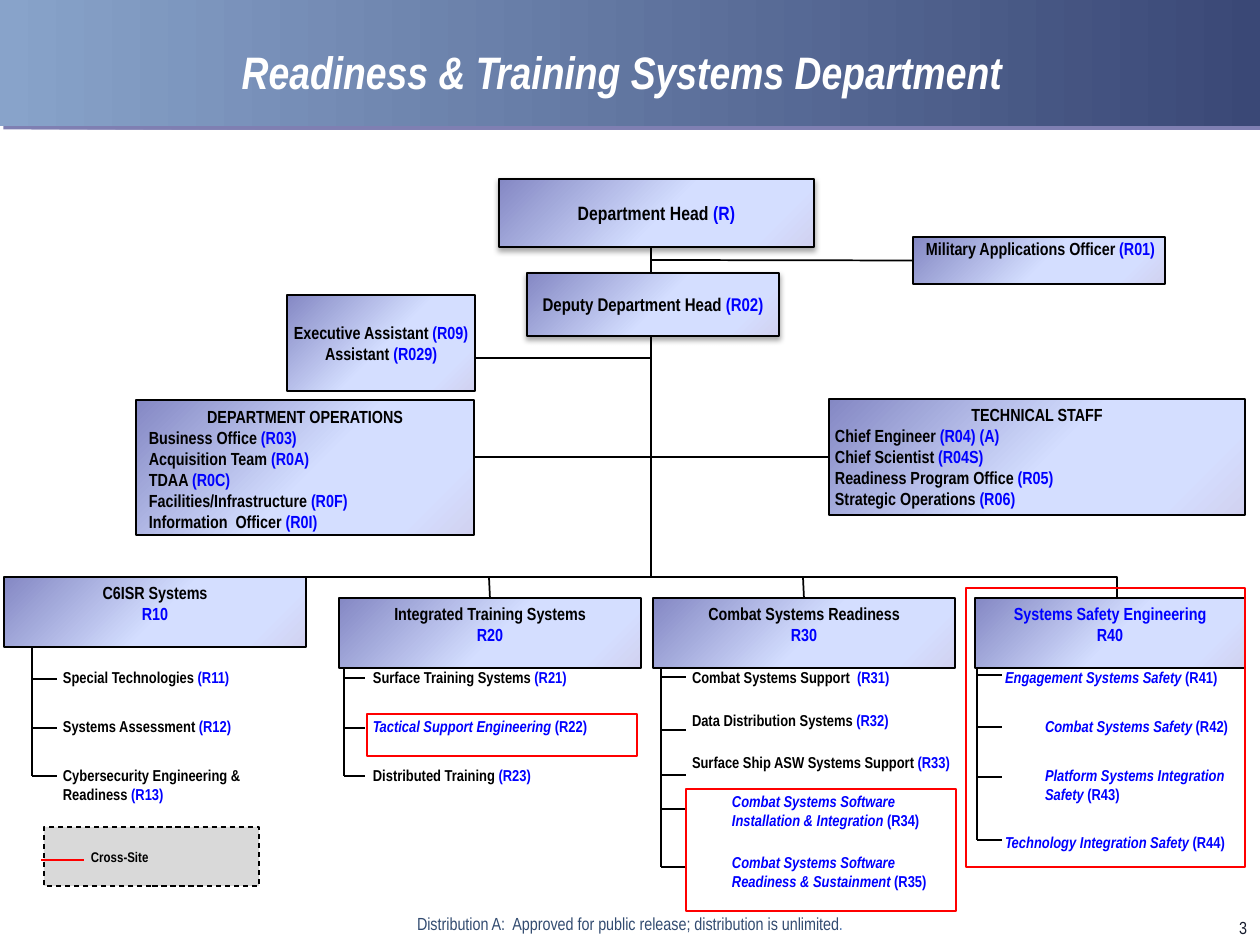
from lxml import etree
from pptx import Presentation
from pptx.dml.color import RGBColor
from pptx.enum.dml import MSO_LINE
from pptx.enum.shapes import MSO_CONNECTOR, MSO_SHAPE
from pptx.enum.text import MSO_ANCHOR, PP_ALIGN
from pptx.oxml.ns import qn
from pptx.util import Emu, Pt

PX = 914400 / 126
FONT = "Arial Narrow"
RECT, LINE, DASH = MSO_SHAPE.RECTANGLE, MSO_CONNECTOR.STRAIGHT, MSO_LINE.DASH
TOP, MIDDLE = MSO_ANCHOR.TOP, MSO_ANCHOR.MIDDLE
LEFT, CENTER, RIGHT = PP_ALIGN.LEFT, PP_ALIGN.CENTER, PP_ALIGN.RIGHT

BLACK = RGBColor(0, 0, 0)
WHITE = RGBColor(255, 255, 255)
BLUE = RGBColor(0, 0, 255)
RED = RGBColor(255, 0, 0)
GRAY = RGBColor(0xD9, 0xD9, 0xD9)
NAVY = RGBColor(0, 0, 0x66)
INK = RGBColor(0x17, 0x1D, 0x2F)
SLATE = RGBColor(0x32, 0x4B, 0x70)
STEEL = RGBColor(0x4E, 0x76, 0xB0)
BAND = [(0, RGBColor(0x88, 0xA3, 0xCA)), (100, RGBColor(0x3A, 0x48, 0x76))]
SHEEN = [(0, RGBColor(0x84, 0x88, 0xC4)), (53, RGBColor(0xD4, 0xDE, 0xFF)),
         (83, RGBColor(0xD4, 0xDE, 0xFF)), (100, RGBColor(0xD1, 0xD1, 0xF0))]

# Staff boxes: place, size, inset x and y, anchor, shadow, lines of (name, code)
STAFF = {
    "deputy": ((527, 273, 252, 63), 10.5, (13, 6), MIDDLE, True,
               [("Deputy Department Head ", "(R02)")]),
    "head": ((499, 179, 315, 68), 11, (13, 6), MIDDLE, True,
             [("Department Head ", "(R)")]),
    "tech": ((829, 399, 416, 116), 10, (6, 6), MIDDLE, False,
             [("TECHNICAL STAFF", ""), ("Chief Engineer ", "(R04) (A)"),
              ("Chief Scientist ", "(R04S)"), ("Readiness Program Office ", "(R05)"),
              ("Strategic Operations ", "(R06)")]),
    "ops": ((136, 400, 338, 135), 10, (13, 6), TOP, False,
            [("DEPARTMENT OPERATIONS", ""), ("Business Office ", "(R03)"),
             ("Acquisition Team ", "(R0A)"), ("TDAA ", "(R0C)"),
             ("Facilities/Infrastructure ", "(R0F)"), ("Information  Officer ", "(R0I)")]),
    "aide": ((287, 295, 188, 96), 10, (6, 6), MIDDLE, False,
             [("Executive Assistant ", "(R09)"), ("Assistant ", "(R029)")]),
    "officer": ((913, 237, 252, 47), 10, (13, 1), TOP, False,
                [("Military Applications Officer ", "(R01)")]),
}

# Divisions: box, spine x, tick end and heights, list place,
# items of (name, code, cross-site, indent, points before)
UNITS = [
    ("C6ISR Systems", "R10", (4, 577, 302, 70), 32, 57, (679, 728, 776), (57, 662, 252),
     [("Special Technologies ", "(R11)", False, 0, 0),
      ("Systems Assessment ", "(R12)", False, 0, 17),
      ("Cybersecurity Engineering & Readiness ", "(R13)", False, 0, 17)]),
    ("Integrated Training Systems", "R20", (339, 598, 302, 70), 344, 365, (678, 728, 776),
     (367, 662, 242),
     [("Surface Training Systems ", "(R21)", False, 0, 0),
      ("Tactical Support Engineering ", "(R22)", True, 0, 17),
      ("Distributed Training ", "(R23)", False, 0, 17)]),
    ("Combat Systems Readiness", "R30", (653, 598, 302, 70), 661, 686,
     (677, 730, 775, 809, 867), (686, 662, 283),
     [("Combat Systems Support  ", "(R31)", False, 0, 0),
      ("Data Distribution Systems ", "(R32)", False, 0, 13.5),
      ("Surface Ship ASW Systems Support ", "(R33)", False, 0, 13.5),
      ("Combat Systems Software Installation & Integration ", "(R34)", True, 40, 11),
      ("Combat Systems Software Readiness & Sustainment ", "(R35)", True, 40, 13.5)]),
    ("Systems Safety Engineering", "R40", (975, 598, 270, 70), 977, 1002,
     (675, 727, 777, 840), (999, 662, 268),
     [("Engagement Systems Safety ", "(R41)", True, 0, 0),
      ("Combat Systems Safety ", "(R42)", True, 40, 17),
      ("Platform Systems Integration Safety ", "(R43)", True, 40, 17),
      ("Technology Integration Safety ", "(R44)", True, 0, 17)]),
]
FRAMES = [(686, 789, 270, 122), (966, 588, 279, 279), (367, 714, 270, 42)]


def px(n):
    return Emu(round(n * PX))


def node(up, tag, **attrs):
    return etree.SubElement(up, qn(tag), {k: str(v) for k, v in attrs.items()})


def blend(shape, stops, angle):
    shape.fill.background()
    props = shape.fill._xPr
    grad = etree.Element(qn("a:gradFill"), rotWithShape="1")
    row = node(grad, "a:gsLst")
    for pos, color in stops:
        node(node(row, "a:gs", pos=pos * 1000), "a:srgbClr", val=color)
    node(grad, "a:lin", ang=angle * 60000, scaled=0)
    props.replace(props.find(qn("a:noFill")), grad)


def shade(shape, color, alpha, blur, dist, angle):
    cast = node(shape._element.spPr.find(qn("a:effectLst")), "a:outerShdw",
                blurRad=Pt(blur), dist=Pt(dist), dir=angle * 60000, algn="tl", rotWithShape=0)
    node(node(cast, "a:srgbClr", val=color), "a:alpha", val=alpha * 1000)


def block(slide, place, fill=None, edge=BLACK, width=1):
    shape = slide.shapes.add_shape(RECT, *map(px, place))
    shape.shadow.inherit = False
    if fill is None:
        shape.fill.background()
    else:
        shape.fill.solid()
        shape.fill.fore_color.rgb = fill
    if edge is None:
        shape.line.fill.background()
    else:
        shape.line.color.rgb = edge
        shape.line.width = Pt(width)
    return shape


def line(slide, x1, y1, x2, y2, color=BLACK):
    link = slide.shapes.add_connector(LINE, *map(px, (x1, y1, x2, y2)))
    link.line.color.rgb = color
    link.line.width = Pt(1)
    node(link._element.spPr, "a:effectLst")
    return link


def frame(shape, inset=(13, 6), anchor=TOP, wrap=True):
    body = shape.text_frame
    body.word_wrap = wrap
    body.vertical_anchor = anchor
    body.margin_left = body.margin_right = px(inset[0])
    body.margin_top = body.margin_bottom = px(inset[1])
    return body


def para(body, first, align=LEFT, before=0, indent=0):
    par = body.paragraphs[0] if first else body.add_paragraph()
    par.alignment = align
    if before:
        par.space_before = Pt(before)
    if indent:
        par._p.get_or_add_pPr().set("marL", str(px(indent)))
    return par


def write(par, text, size, color, bold=True, italic=False):
    run = par.add_run()
    run.text = text
    font = run.font
    font.name, font.size, font.bold, font.italic = FONT, Pt(size), bold, italic
    font.color.rgb = color


def label(slide, place, align, runs, size, bold=False, italic=False):
    body = frame(slide.shapes.add_textbox(*map(px, place)))
    par = para(body, True, align)
    for text, color in runs:
        write(par, text, size, color, bold, italic)


def post(slide, place, size, inset, anchor, raised, rows):
    shape = block(slide, place)
    blend(shape, SHEEN, 45)
    if raised:
        shade(shape, BLACK, 35, 3.1, 1.8, 90)
    body = frame(shape, inset, anchor, False)
    for i, (name, code) in enumerate(rows):
        par = para(body, i == 0, CENTER if i == 0 or len(rows) == 2 else LEFT)
        if len(rows) == 1 and anchor == TOP:
            par.alignment = LEFT
        if name:
            write(par, name, size, BLUE if code == "" and "Safety" in name else BLACK)
        if code:
            write(par, code, size, BLUE)
    return shape


def unit(slide, name, code, place, spine, end, ticks, spot, items):
    line(slide, spine, place[1] + place[3], spine, ticks[-1])
    for y in ticks:
        line(slide, spine, y, end, y)
    box = post(slide, place, 10, (6, 5), TOP, False, [(name, ""), ("", code)])
    x, y, width = spot
    body = frame(slide.shapes.add_textbox(px(x), px(y), px(width), px(180)), (6, 6))
    for i, (text, mark, cross, indent, before) in enumerate(items):
        par = para(body, i == 0, LEFT, before, indent)
        write(par, text, 9, BLUE if cross else BLACK, italic=cross)
        write(par, mark, 9, BLUE)
    return box


def main():
    deck = Presentation()
    deck.slide_width, deck.slide_height = px(1260), px(945)
    slide = deck.slides.add_slide(deck.slide_layouts[6])

    # Header band, title and footer
    band = block(slide, (0, 0, 1260, 126), edge=None)
    blend(band, BAND, 0)
    shade(band, NAVY, 50, 0, 2.8, 45)
    label(slide, (145, 38, 955, 68), CENTER,
          [("Readiness & Training Systems Department", WHITE)], 26, True, True)
    label(slide, (966, 911, 294, 34), RIGHT, [("3", INK)], 10)
    label(slide, (378, 907, 504, 34), CENTER,
          [("Distribution A:  Approved for public release; distribution is unlimited", SLATE),
           (".", STEEL)], 10)

    # Trunk and rail behind the boxes
    line(slide, 651, 200, 651, 577)
    path = slide.shapes.build_freeform(173, 612, PX)
    path.add_line_segments([(173, 577), (1117, 577), (1117, 621)], close=False)
    rail = path.convert_to_shape()
    rail.shadow.inherit = False
    rail.fill.background()
    rail.line.color.rgb = BLACK
    rail.line.width = Pt(1)

    # Staff boxes and their links
    staff = {key: post(slide, *row) for key, row in STAFF.items()}
    line(slide, 651, 260, 913, 260).end_connect(staff["officer"], 1)
    line(slide, 475, 358, 651, 358)
    line(slide, 474, 457, 829, 457).end_connect(staff["tech"], 1)

    # Divisions; the middle two hang from the rail
    boxes = [unit(slide, *row) for row in UNITS]
    for box, x in zip(boxes[1:3], (489, 803)):
        line(slide, x, 577, x, 598).end_connect(box, 0)

    # Cross-site frames and legend
    for place in FRAMES:
        block(slide, place, edge=RED)
    key = block(slide, (44, 827, 215, 59), GRAY, width=0.75)
    key.line.dash_style = DASH
    write(para(frame(key, anchor=MIDDLE), True, indent=34), "Cross-Site", 8, BLACK)
    line(slide, 41, 860, 84, 860, RED)

    deck.save("out.pptx")


if __name__ == "__main__":
    main()
